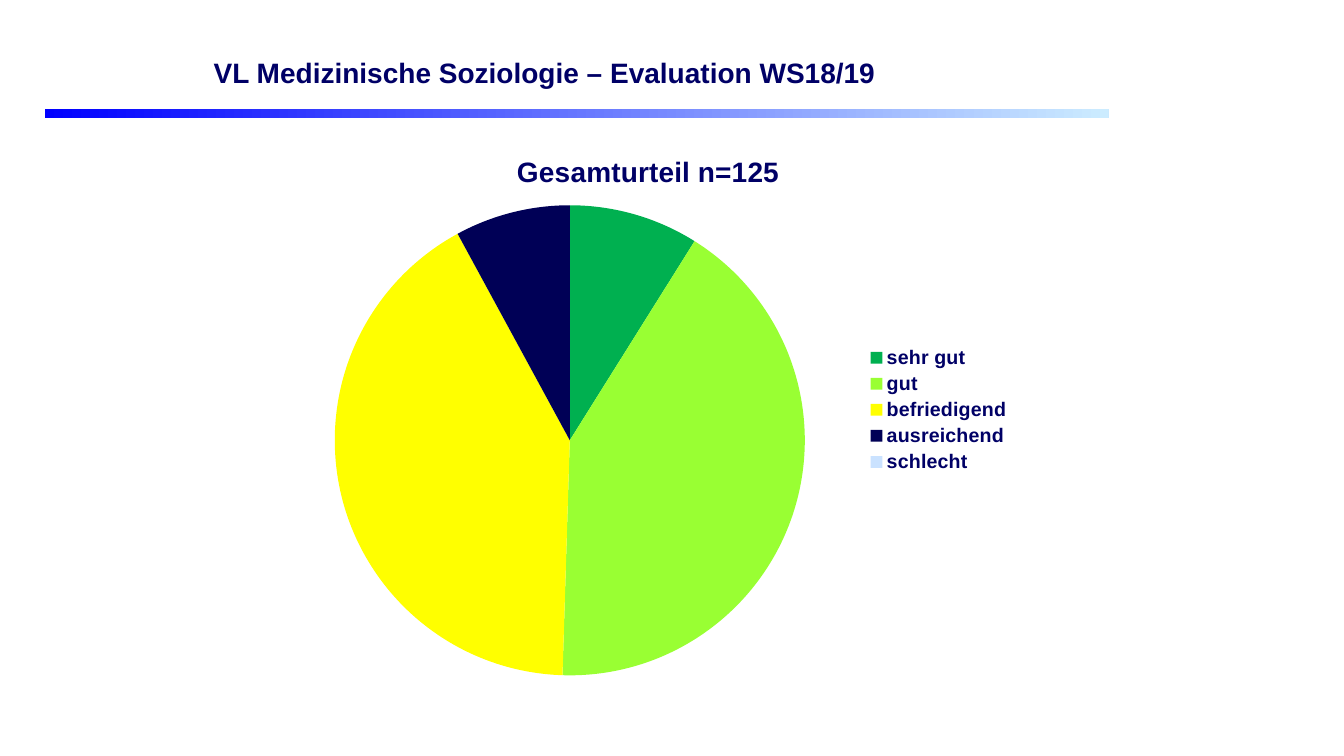
from lxml import etree
from pptx import Presentation
from pptx.chart.data import CategoryChartData
from pptx.dml.color import RGBColor
from pptx.enum.chart import XL_CHART_TYPE, XL_LEGEND_POSITION
from pptx.enum.shapes import MSO_SHAPE
from pptx.enum.text import MSO_ANCHOR, PP_ALIGN
from pptx.oxml.ns import qn
from pptx.util import Pt

NAVY = RGBColor(0x00, 0x00, 0x66)
BLUE = RGBColor(0x00, 0x00, 0xFF)
PALE_BLUE = RGBColor(0xCC, 0xEC, 0xFF)
FONT = "Arial"

HEADING = "VL Medizinische Soziologie – Evaluation WS18/19"
CHART_TITLE = "Gesamturteil n=125"
RATINGS = [
    ("sehr gut", 9, RGBColor(0x00, 0xB0, 0x50)),
    ("gut", 42, RGBColor(0x99, 0xFF, 0x33)),
    ("befriedigend", 42, RGBColor(0xFF, 0xFF, 0x00)),
    ("ausreichend", 8, RGBColor(0x00, 0x00, 0x56)),
    ("schlecht", None, RGBColor(0xCA, 0xE2, 0xFF)),
]

# Left, top, width, height in points
RULE_AREA = (32, 78, 760, 6)
HEADING_AREA = (145.5, 26, 527, 51)
CHART_AREA = (196.5, 94.5, 533, 396.5)
# Pie area as fractions of the chart
PIE_AREA = {"x": 0.08, "y": 0.13, "w": 0.63, "h": 0.85}


def points(area):
    return [Pt(length) for length in area]


def format_font(font, size, bold=True):
    font.name = FONT
    font.size = Pt(size)
    font.bold = bold
    font.color.rgb = NAVY


def add_text(frame, text, size, align):
    para = frame.paragraphs[0]
    para.alignment = align
    span = para.add_run()
    span.text = text
    format_font(span.font, size)


def add_rule(page):
    rule = page.shapes.add_shape(MSO_SHAPE.RECTANGLE, *points(RULE_AREA))
    rule.shadow.inherit = False
    rule.line.fill.background()
    rule.fill.gradient()
    rule.fill.gradient_angle = 0
    for stop, position, color in zip(rule.fill.gradient_stops, (0, 1), (BLUE, PALE_BLUE)):
        stop.position = position
        stop.color.rgb = color


def add_heading(page):
    box = page.shapes.add_textbox(*points(HEADING_AREA))
    frame = box.text_frame
    frame.word_wrap = True
    frame.vertical_anchor = MSO_ANCHOR.MIDDLE
    add_text(frame, HEADING, 20, PP_ALIGN.LEFT)


def place_plot(chart):
    """Fix the inner plot area at PIE_AREA."""
    plot_area = chart.plots[0]._element.getparent()
    layout = plot_area.find(qn("c:layout"))
    if layout is None:
        layout = etree.Element(qn("c:layout"))
        plot_area.insert(0, layout)
    manual = etree.SubElement(layout, qn("c:manualLayout"))
    settings = {"layoutTarget": "inner", "xMode": "edge", "yMode": "edge", **PIE_AREA}
    for name, value in settings.items():
        etree.SubElement(manual, qn(f"c:{name}")).set("val", str(value))


def add_rating_chart(page):
    data = CategoryChartData()
    data.categories = [label for label, _, _ in RATINGS]
    data.add_series("Series 1", [value for _, value, _ in RATINGS])
    chart = page.shapes.add_chart(XL_CHART_TYPE.PIE, *points(CHART_AREA), data).chart
    format_font(chart.font, 10, bold=False)

    chart.has_title = True
    add_text(chart.chart_title.text_frame, CHART_TITLE, 20, PP_ALIGN.CENTER)
    chart.chart_title.include_in_layout = False

    chart.has_legend = True
    chart.legend.position = XL_LEGEND_POSITION.RIGHT
    chart.legend.include_in_layout = False
    format_font(chart.legend.font, 14)

    plot = chart.plots[0]
    plot.vary_by_categories = True
    for index, (_, _, color) in enumerate(RATINGS):
        slice_format = plot.series[0].points[index].format
        slice_format.fill.solid()
        slice_format.fill.fore_color.rgb = color
        slice_format.line.fill.background()
    place_plot(chart)


def main():
    deck = Presentation()
    deck.slide_width, deck.slide_height = Pt(960), Pt(540)
    page = deck.slides.add_slide(deck.slide_layouts[6])
    add_rule(page)
    add_heading(page)
    add_rating_chart(page)
    deck.save("out.pptx")


if __name__ == "__main__":
    main()
